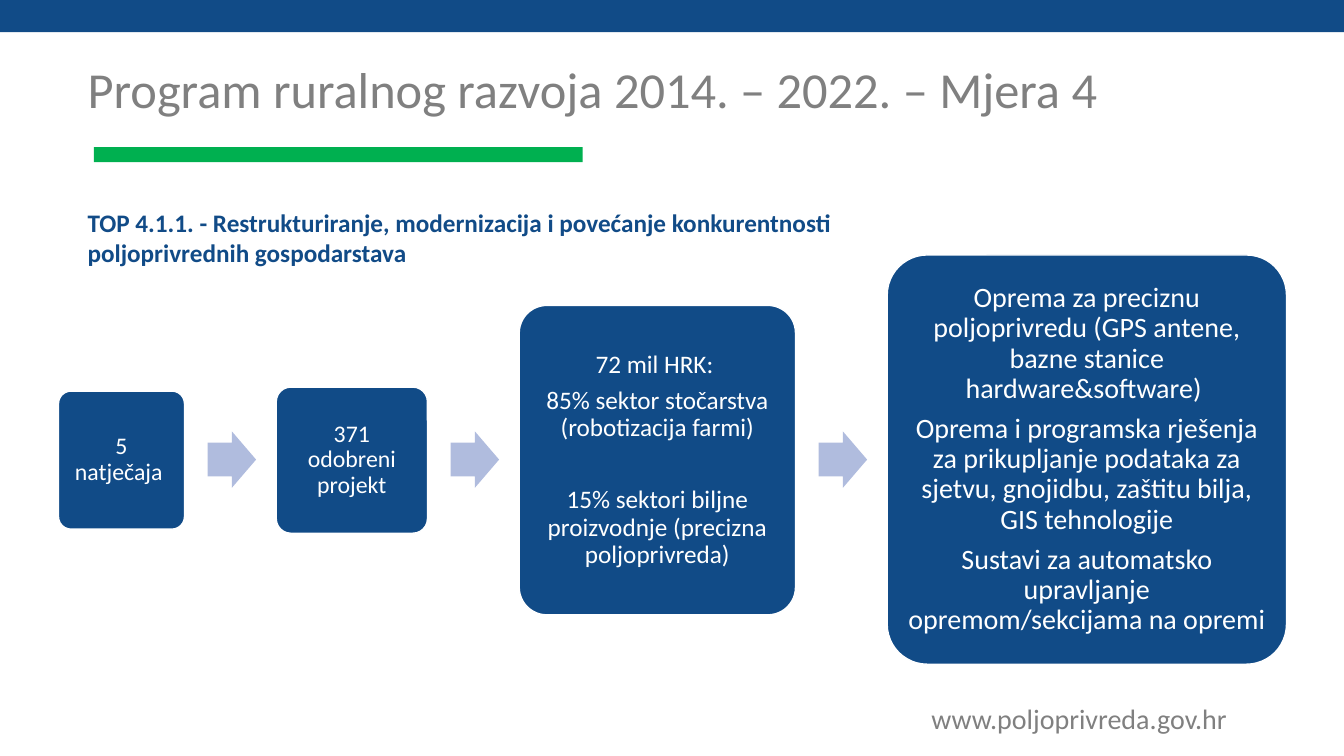
from pptx import Presentation
from pptx.dml.color import RGBColor
from pptx.enum.shapes import MSO_SHAPE
from pptx.enum.text import MSO_ANCHOR, MSO_AUTO_SIZE, PP_ALIGN
from pptx.util import Pt

PX = 9144
FONT = "Calibri"
BLUE = RGBColor(0x11, 0x4B, 0x87)
GREEN = RGBColor(0x00, 0xB0, 0x50)
GRAY = RGBColor(0x80, 0x80, 0x80)
PALE = RGBColor(0xB0, 0xBC, 0xDE)
WHITE = RGBColor(0xFF, 0xFF, 0xFF)

GAP = 91
ARROW = (23, 48, 56)
STEPS = [
    (125, 137, 17, 7, ["5 natječaja "]),
    (150, 145, 17, 7, ["371 odobreni projekt"]),
    (274, 307, 18, 7, [
        "72 mil HRK: ",
        "85% sektor stočarstva (robotizacija farmi)",
        "15% sektori biljne proizvodnje (precizna poljoprivreda)",
    ]),
    (396, 406, 20, 8, [
        "Oprema za preciznu poljoprivredu (GPS antene, bazne stanice hardware&software) ",
        "Oprema i programska rješenja za prikupljanje podataka za sjetvu, gnojidbu, zaštitu bilja, GIS tehnologije",
        "Sustavi za automatsko upravljanje opremom/sekcijama na opremi",
    ]),
]
SPLIT = (2, 2)


def scale(*box):
    return [n * PX for n in box]


def add_run(para, text, size, color, bold=False):
    run = para.add_run()
    run.text = text
    run.font.name = FONT
    run.font.size = Pt(size)
    run.font.bold = bold
    run.font.color.rgb = color


def add_block(slide, kind, box, color):
    block = slide.shapes.add_shape(kind, *scale(*box))
    block.shadow.inherit = False
    block.fill.solid()
    block.fill.fore_color.rgb = color
    block.line.fill.background()
    return block


def add_label(slide, box, text, size, color, bold=False):
    frame = slide.shapes.add_textbox(*scale(*box)).text_frame
    frame.word_wrap = True
    add_run(frame.paragraphs[0], text, size, color, bold)


def add_title(slide, box, text):
    title = slide.shapes.title
    title.left, title.top, title.width, title.height = scale(*box)
    frame = title.text_frame
    frame.auto_size = MSO_AUTO_SIZE.NONE
    frame.word_wrap = True
    frame.vertical_anchor = MSO_ANCHOR.MIDDLE
    para = frame.paragraphs[0]
    para.alignment = PP_ALIGN.LEFT
    para.line_spacing = 0.9
    add_run(para, text, 36, GRAY)


def add_frame(slide, box):
    left, top, width, height = box
    add_block(slide, MSO_SHAPE.RECTANGLE, (left + 93, top + 146, 485, 15), GREEN)
    add_block(slide, MSO_SHAPE.RECTANGLE, (left, top, width, 32), BLUE)
    add_label(slide, (left + 914, top + height - 59, 328, 44),
              "www.poljoprivreda.gov.hr", 20, GRAY)


def add_step(slide, box, size, inset, lines, split):
    card = add_block(slide, MSO_SHAPE.ROUNDED_RECTANGLE, box, BLUE)
    card.adjustments[0] = 0.1
    card.line.color.rgb = WHITE
    card.line.width = Pt(1)
    frame = card.text_frame
    frame.word_wrap = True
    frame.vertical_anchor = MSO_ANCHOR.MIDDLE
    frame.margin_left = frame.margin_right = inset * PX
    frame.margin_top = frame.margin_bottom = inset * PX
    for i, line in enumerate(lines):
        para = frame.paragraphs[0] if i == 0 else frame.add_paragraph()
        para.alignment = PP_ALIGN.CENTER
        para.line_spacing = 0.9
        para.space_before = Pt(26 if i == split else 0)
        para.space_after = Pt(round(size * 0.35, 1))
        add_run(para, line, size, WHITE)


def add_flow(slide, box):
    left, top, width, height = box
    mid = top + height // 2
    shift, wide, high = ARROW
    for i, (w, h, size, inset, lines) in enumerate(STEPS):
        if i:
            spot = (left - GAP + shift, mid - high // 2, wide, high)
            arrow = add_block(slide, MSO_SHAPE.RIGHT_ARROW, spot, PALE)
            arrow.adjustments[0] = 0.6
            arrow.adjustments[1] = 0.5
        split = SPLIT[1] if i == SPLIT[0] else None
        add_step(slide, (left, mid - h // 2, w, h), size, inset, lines, split)
        left += w + GAP


def main():
    deck = Presentation()
    deck.slide_width, deck.slide_height = scale(1333, 750)
    slide = deck.slides.add_slide(deck.slide_layouts[5])
    add_frame(slide, (0, 0, 1333, 750))
    add_title(slide, (77, 38, 1150, 106),
              "Program ruralnog razvoja 2014. – 2022. – Mjera 4")
    add_flow(slide, (58, 253, 1217, 406))
    add_label(slide, (77, 201, 774, 71),
              "TOP 4.1.1. - Restrukturiranje, modernizacija i povećanje "
              "konkurentnosti poljoprivrednih gospodarstava", 18, BLUE, True)
    deck.save("out.pptx")


if __name__ == "__main__":
    main()
